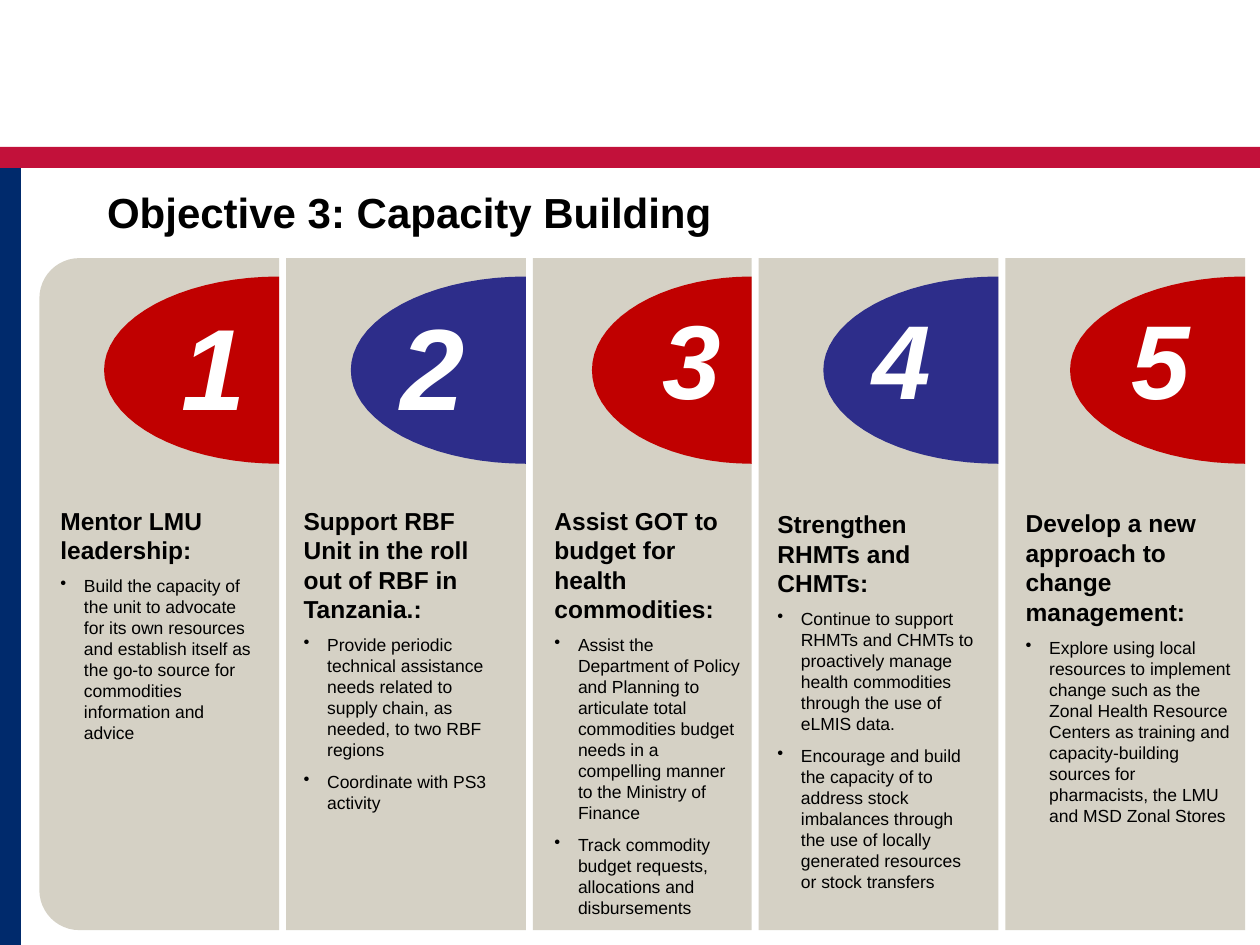
import math
import pptx
import pptx.util
import pptx.dml.color
import pptx.enum.shapes
import pptx.enum.text
import pptx.oxml

Pt = pptx.util.Pt
RGB = pptx.dml.color.RGBColor
FORM = pptx.enum.shapes.MSO_SHAPE
TEXT = pptx.enum.text

BLACK = RGB(0, 0, 0)
WHITE = RGB(255, 255, 255)
CRIMSON = RGB(0xC2, 0x11, 0x3A)
NAVY = RGB(0x00, 0x2A, 0x6C)
SAND = RGB(0xD5, 0xD1, 0xC5)
RED = RGB(0xC0, 0x00, 0x00)
BLUE = RGB(0x2D, 0x2D, 0x8A)

TITLE = {"name": "Arial", "size": Pt(24), "bold": True}
HEAD = {"name": "Arial", "size": Pt(14), "bold": True}
ITEM = {"name": "Arial", "size": Pt(10), "bold": False}
DIGIT = {"name": "Arial", "bold": True, "italic": True}
FRAME = {"word_wrap": True, "margin_left": 0, "margin_right": 0,
         "margin_top": 0, "margin_bottom": 0}

NS = 'xmlns:a="http://schemas.openxmlformats.org/drawingml/2006/main"'

TOP, LEFT, TALL, GAP = 147.5, 22.5, 384, 4

PANELS = [
    {"wide": 137, "tone": RED, "size": 66, "num": 81, "text": (12, 141.5, 109.5),
     "head": "Mentor LMU leadership:",
     "items": ["Build the capacity of the unit to advocate for its own resources and "
               "establish itself as the go-to source for commodities information and advice"]},
    {"wide": 137, "tone": BLUE, "size": 66, "num": 65.5, "text": (10, 141.5, 116),
     "head": "Support RBF Unit in the roll out of RBF in Tanzania.:",
     "items": ["Provide periodic technical assistance needs related to supply chain, "
               "as needed, to two RBF regions",
               "Coordinate with PS3 activity"]},
    {"wide": 125, "tone": RED, "size": 60, "num": 74, "text": (12.3, 141.5, 106.5),
     "head": "Assist GOT to budget for health commodities:",
     "items": ["Assist the Department of Policy and Planning to articulate total commodities "
               "budget needs in a compelling manner to the Ministry of Finance",
               "Track commodity budget requests, allocations and disbursements"]},
    {"wide": 137, "tone": BLUE, "size": 60, "num": 65, "text": (10.7, 143.5, 115),
     "head": "Strengthen RHMTs and CHMTs:",
     "items": ["Continue to support RHMTs and CHMTs to proactively manage health "
               "commodities through the use of eLMIS data.",
               "Encourage and build the capacity of to address stock imbalances through "
               "the use of locally generated resources or stock transfers"]},
    {"wide": 137, "tone": RED, "size": 60, "num": 72, "text": (11.6, 143, 119.5),
     "head": "Develop a new approach to change management:",
     "items": ["Explore using local resources to implement change such as the Zonal Health "
               "Resource Centers as training and capacity-building sources for pharmacists, "
               "the LMU and MSD Zonal Stores"]},
]


def style(thing, form):
    for key, val in form.items():
        setattr(thing, key, val)


def paint(shape, tone):
    shape.shadow.inherit = False
    shape.fill.solid()
    shape.fill.fore_color.rgb = tone
    shape.line.fill.background()


def block(slide, x, y, w, h, tone, kind=FORM.RECTANGLE):
    shape = slide.shapes.add_shape(kind, Pt(x), Pt(y), Pt(w), Pt(h))
    paint(shape, tone)
    return shape


def write(para, text, form, tone):
    para.text = text
    style(para.font, form)
    para.font.color.rgb = tone


def frame(slide, x, y, w, h):
    text = slide.shapes.add_textbox(Pt(x), Pt(y), Pt(w), Pt(h)).text_frame
    style(text, FRAME)
    return text


def banner(slide, x, y, w, h):
    title = slide.shapes.title
    style(title, {"left": Pt(x), "top": Pt(y), "width": Pt(w), "height": Pt(h)})
    style(title.text_frame, {"vertical_anchor": TEXT.MSO_ANCHOR.MIDDLE,
                             "auto_size": TEXT.MSO_AUTO_SIZE.NONE,
                             "margin_bottom": Pt(15.5)})
    para = title.text_frame.paragraphs[0]
    write(para, "Objective 3: Capacity Building", TITLE, BLACK)
    para.alignment = TEXT.PP_ALIGN.LEFT


def half(slide, x, y, w, h, tone):
    turns = [math.radians(90 + 5 * step) for step in range(37)]
    points = [(Pt(x + w + w * math.cos(turn)), Pt(y + h / 2 - h / 2 * math.sin(turn)))
              for turn in turns]
    build = slide.shapes.build_freeform(*points[0])
    build.add_line_segments(points[1:], close=True)
    paint(build.convert_to_shape(), tone)


def bullet(para):
    props = para._p.get_or_add_pPr()
    props.set("marL", str(Pt(13.5)))
    props.set("indent", str(-Pt(13.5)))
    props.append(pptx.oxml.parse_xml(f'<a:buChar {NS} char="•"/>'))


def notes(slide, x, y, w, h, head, items):
    text = frame(slide, x, y, w, h)
    first = text.paragraphs[0]
    write(first, head, HEAD, BLACK)
    first.space_after = Pt(3)
    for item in items:
        para = text.add_paragraph()
        style(para, {"space_before": Pt(3), "space_after": Pt(3)})
        bullet(para)
        write(para, item, ITEM, BLACK)


def panel(slide, x, y, w, h, rank, data):
    if rank == 1:
        back = block(slide, x + (w - h) / 2, y + (h - w) / 2, h, w, SAND,
                     FORM.ROUND_2_SAME_RECTANGLE)
        back.rotation = 270
    else:
        block(slide, x, y, w, h, SAND)
    span = 0.73 * w
    half(slide, x + w - span, y + 10.5, span, 107, data["tone"])
    digit = frame(slide, x + data["num"], y + 21, 45, 74)
    write(digit.paragraphs[0], str(rank), {**DIGIT, "size": Pt(data["size"])}, WHITE)
    dx, dy, wide = data["text"]
    notes(slide, x + dx, y + dy, wide, h - dy, data["head"], data["items"])


def main():
    deck = pptx.Presentation()
    style(deck, {"slide_width": Pt(720), "slide_height": Pt(540)})
    slide = deck.slides.add_slide(deck.slide_layouts[5])
    block(slide, 0, 84, 720, 12, CRIMSON)
    block(slide, 0, 96, 12, 444, NAVY)
    banner(slide, 54, 103, 612, 48)
    x = LEFT
    for rank, data in enumerate(PANELS, 1):
        panel(slide, x, TOP, data["wide"], TALL, rank, data)
        x += data["wide"] + GAP
    deck.save("out.pptx")


if __name__ == "__main__":
    main()
